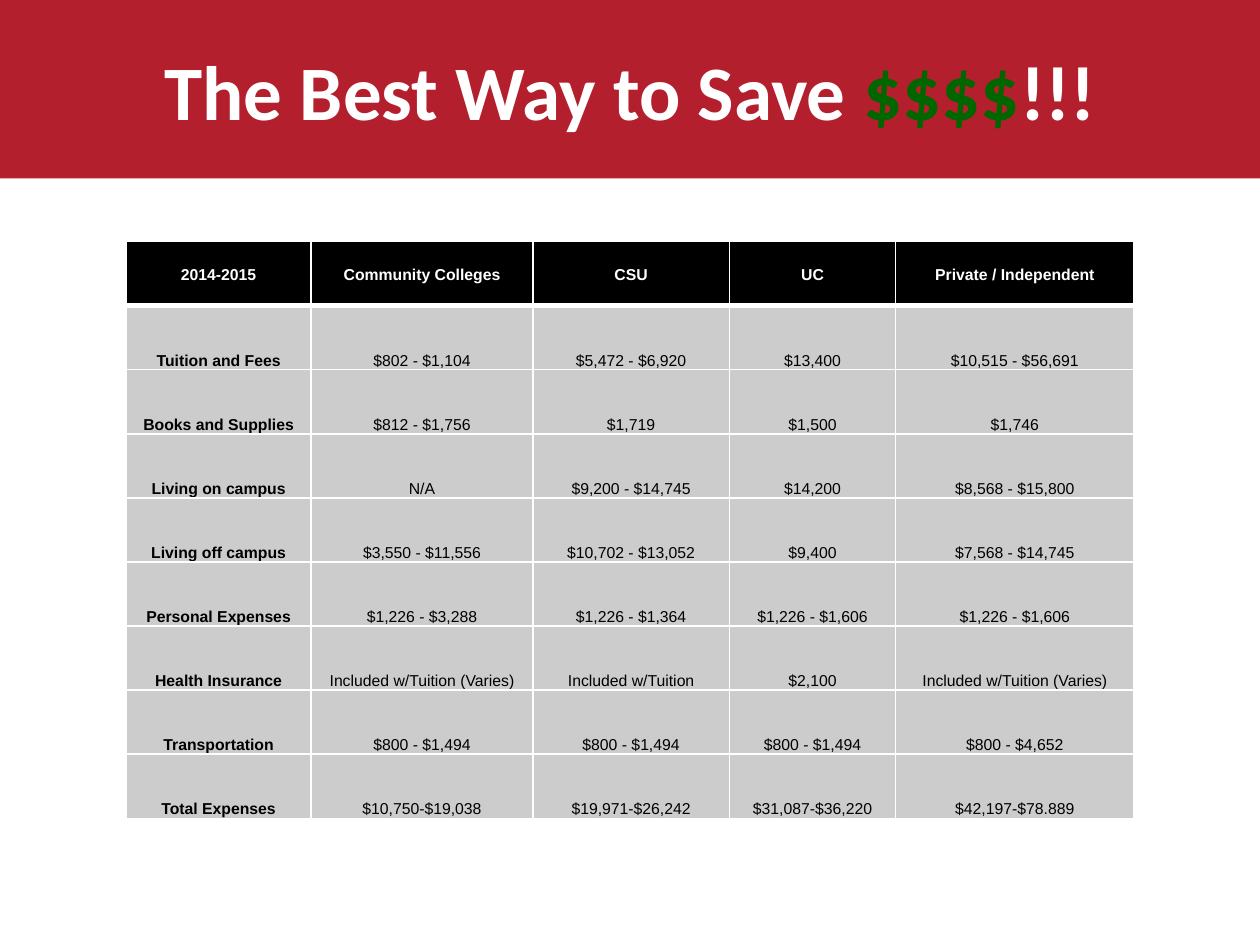
from dataclasses import dataclass

from lxml.etree import SubElement
from pptx import Presentation
from pptx.dml.color import RGBColor
from pptx.enum.shapes import MSO_SHAPE as Preset
from pptx.enum.text import MSO_ANCHOR as Anchor, PP_ALIGN as Align
from pptx.oxml.ns import qn
from pptx.util import Pt

WHITE, BLACK, RED, GREEN, GREY = "FFFFFF", "000000", "B41F2D", "006600", "CCCCCC"
COLUMN_WIDTHS = (105.8, 126.7, 112.3, 95.1, 136.1)
ROW_HEIGHT = 36.65
COSTS = (
    ("2014-2015", "Community Colleges", "CSU", "UC", "Private / Independent"),
    ("Tuition and Fees", "$802 - $1,104", "$5,472 - $6,920", "$13,400", "$10,515 - $56,691"),
    ("Books and Supplies", "$812 - $1,756", "$1,719", "$1,500", "$1,746"),
    ("Living on campus", "N/A", "$9,200 - $14,745", "$14,200", "$8,568 - $15,800"),
    ("Living off campus", "$3,550 - $11,556", "$10,702 - $13,052", "$9,400", "$7,568 - $14,745"),
    ("Personal Expenses", "$1,226 - $3,288", "$1,226 - $1,364", "$1,226 - $1,606", "$1,226 - $1,606"),
    ("Health Insurance", "Included w/Tuition (Varies)", "Included w/Tuition", "$2,100",
     "Included w/Tuition (Varies)"),
    ("Transportation", "$800 - $1,494", "$800 - $1,494", "$800 - $1,494", "$800 - $4,652"),
    ("Total Expenses", "$10,750-$19,038", "$19,971-$26,242", "$31,087-$36,220", "$42,197-$78.889"),
)


@dataclass(frozen=True)
class CellStyle:
    fill: str
    color: str
    bold: bool
    anchor: Anchor
    top: float = 1
    bottom: float = 1


HEADER = CellStyle(BLACK, WHITE, True, Anchor.MIDDLE, bottom=3)


def rgb(value: str) -> RGBColor:
    return RGBColor.from_string(value)


def add_text(paragraph, text: str, *, size: float, font: str, color: str, bold: bool = False) -> None:
    run = paragraph.add_run()
    run.text = text
    run.font.size, run.font.name, run.font.bold = Pt(size), font, bold
    run.font.color.rgb = rgb(color)


def add_border(cell, side: str, width: float) -> None:
    line = SubElement(cell._tc.get_or_add_tcPr(), qn(f"a:ln{side}"), w=str(Pt(width)))
    SubElement(SubElement(line, qn("a:solidFill")), qn("a:srgbClr"), val=WHITE)


def fill_cell(cell, text: str, style: CellStyle) -> None:
    for side, width in (("L", 1), ("R", 1), ("T", style.top), ("B", style.bottom)):
        add_border(cell, side, width)
    cell.fill.solid()
    cell.fill.fore_color.rgb = rgb(style.fill)
    cell.vertical_anchor = style.anchor
    cell.margin_left = cell.margin_right = Pt(5)
    cell.margin_top = cell.margin_bottom = Pt(0)
    paragraph = cell.text_frame.paragraphs[0]
    paragraph.alignment, paragraph.line_spacing = Align.CENTER, 1.15
    add_text(paragraph, text, size=9, font="Arial", color=style.color, bold=style.bold)


def add_banner(slide) -> None:
    banner = slide.shapes.add_shape(Preset.RECTANGLE, Pt(0), Pt(0), Pt(720), Pt(102))
    banner.shadow.inherit = False
    banner.fill.solid()
    banner.fill.fore_color.rgb = rgb(RED)
    banner.line.fill.background()


def add_title(slide) -> None:
    frame = slide.shapes.add_textbox(Pt(36), Pt(6), Pt(648), Pt(90)).text_frame
    frame.word_wrap, frame.vertical_anchor = True, Anchor.MIDDLE
    paragraph = frame.paragraphs[0]
    paragraph.alignment = Align.CENTER
    for text, color in (("The Best Way to Save ", WHITE), ("$$$$", GREEN), ("!!!", WHITE)):
        add_text(paragraph, text, size=44, font="Calibri", color=color, bold=True)


def add_cost_table(slide) -> None:
    table = slide.shapes.add_table(
        len(COSTS), len(COLUMN_WIDTHS), Pt(72), Pt(138),
        Pt(sum(COLUMN_WIDTHS)), Pt(ROW_HEIGHT * len(COSTS)),
    ).table
    for column, width in zip(table.columns, COLUMN_WIDTHS):
        column.width = Pt(width)
    for row_index, values in enumerate(COSTS):
        table.rows[row_index].height = Pt(ROW_HEIGHT)
        for column_index, text in enumerate(values):
            body = CellStyle(GREY, BLACK, column_index == 0, Anchor.BOTTOM,
                             top=3 if row_index == 1 else 1)
            fill_cell(table.cell(row_index, column_index), text, body if row_index else HEADER)


def main() -> None:
    presentation = Presentation()
    presentation.slide_width, presentation.slide_height = Pt(720), Pt(540)
    slide = presentation.slides.add_slide(presentation.slide_layouts[6])
    add_banner(slide)
    add_title(slide)
    add_cost_table(slide)
    presentation.save("out.pptx")


if __name__ == "__main__":
    main()
